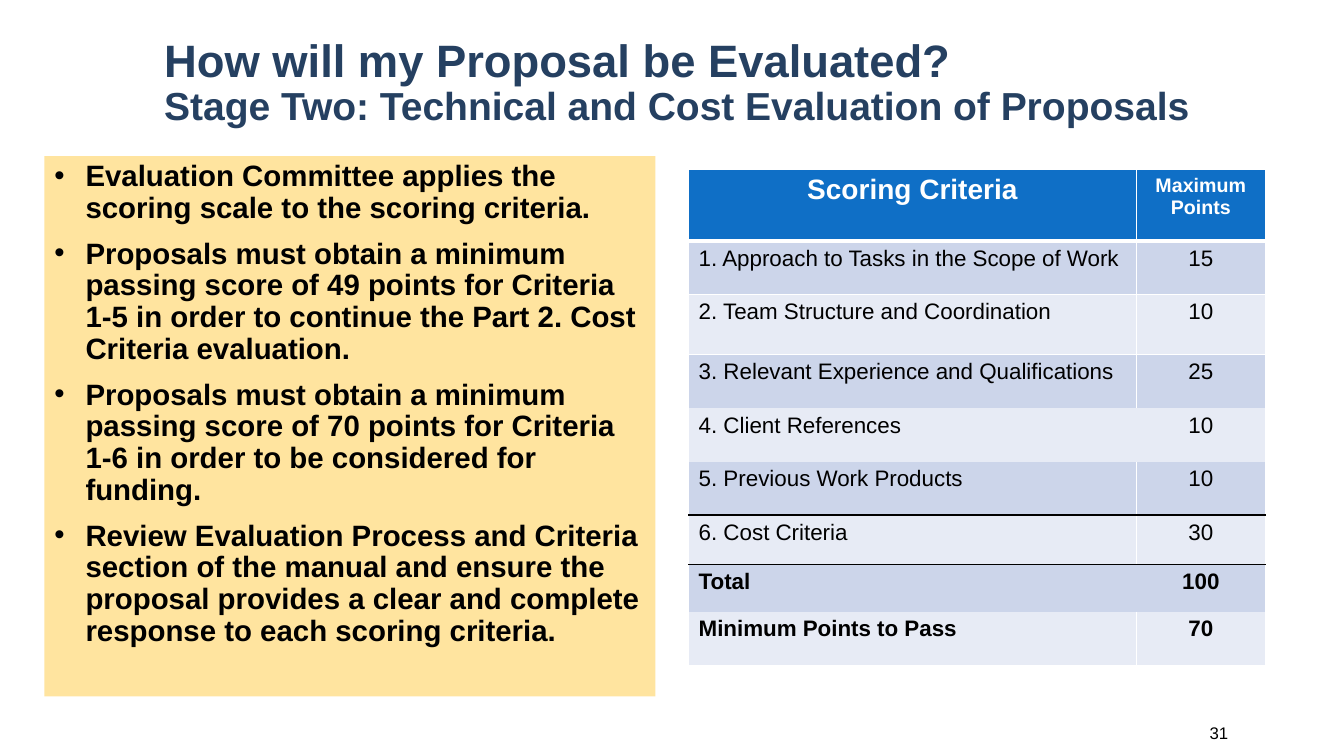
from dataclasses import dataclass

from lxml import etree
from pptx import Presentation
from pptx import util as u
from pptx.dml.color import RGBColor
from pptx.enum import shapes, text
from pptx.oxml import ns

PX = 9144  # EMU in one px, 100 px to the inch
FONT = "Arial"
NAVY = RGBColor(0x25, 0x40, 0x61)
CREAM = RGBColor(0xFF, 0xE4, 0x9F)
BLUE = RGBColor(0x0F, 0x6F, 0xC6)
BAND_DARK = RGBColor(0xCC, 0xD5, 0xEA)
BAND_LIGHT = RGBColor(0xE7, 0xEB, 0xF5)
WHITE = RGBColor(0xFF, 0xFF, 0xFF)
BLACK = RGBColor(0, 0, 0)


@dataclass(frozen=True)
class ScoreRow:
    """A table row; white and black list the sides (L, R, T, B) ruled in each colour."""
    label: str
    points: str
    height: int
    white: str = "LRTB"
    black: str = ""
    bold: bool = False


TITLE_LINES = [
    ("How will my Proposal be Evaluated?", 32.4),
    ("Stage Two: Technical and Cost Evaluation of Proposals", 27.9),
]
BULLETS = [
    "Evaluation Committee applies the scoring scale to the scoring criteria.",
    "Proposals must obtain a minimum passing score of 49 points for Criteria 1-5 "
    "in order to continue the Part 2. Cost Criteria evaluation.",
    "Proposals must obtain a minimum passing score of 70 points for Criteria 1-6 "
    "in order to be considered for funding.",
    "Review Evaluation Process and Criteria section of the manual and ensure the "
    "proposal provides a clear and complete response to each scoring criteria.",
]
COLUMN_WIDTHS = [444, 128]
HEADER_SIZES = [20, 14]
SCORE_ROWS = [
    ScoreRow("Scoring Criteria", "Maximum Points", 71, bold=True),
    ScoreRow("1. Approach to Tasks in the Scope of Work", "15", 53),
    ScoreRow("2. Team Structure and Coordination", "10", 60),
    ScoreRow("3. Relevant Experience and Qualifications", "25", 53, white="LRT"),
    ScoreRow("4. Client References", "10", 53, white=""),
    ScoreRow("5. Previous Work Products", "10", 53, white="LR", black="B"),
    ScoreRow("6. Cost Criteria", "30", 49, white="LR", black="TB"),
    ScoreRow("Total", "100", 47, white="", black="T", bold=True),
    ScoreRow("Minimum Points to Pass", "70", 53, white="LRB", bold=True),
]


def px(length: int) -> u.Emu:
    return u.Emu(length * PX)


def set_font(para, color: RGBColor, bold: bool, size: float | None = None) -> None:
    font = para.font
    font.name = FONT
    font.bold = bold
    font.color.rgb = color
    if size:
        font.size = u.Pt(size)


def add_text_box(page, left: int, top: int, width: int, height: int):
    """Add a wrapping, vertically centred text box and return its first paragraph."""
    box = page.shapes.add_textbox(px(left), px(top), px(width), px(height))
    box.text_frame.word_wrap = True
    box.text_frame.vertical_anchor = text.MSO_ANCHOR.MIDDLE
    return box.text_frame.paragraphs[0]


def add_title(page) -> None:
    para = add_text_box(page, 153, 26, 1089, 114)
    para.line_spacing = 0.9
    set_font(para, NAVY, True)
    for index, (line, size) in enumerate(TITLE_LINES):
        if index:
            para.add_line_break()
        span = para.add_run()
        span.text = line
        span.font.size = u.Pt(size)


def add_bullet_panel(page) -> None:
    panel = page.shapes.add_shape(
        shapes.MSO_SHAPE.RECTANGLE, px(44), px(155), px(606), px(536))
    panel.shadow.inherit = False
    panel.fill.solid()
    panel.fill.fore_color.rgb = CREAM
    panel.line.fill.background()
    frame = panel.text_frame
    frame.word_wrap = True
    frame.vertical_anchor = text.MSO_ANCHOR.TOP
    for index, bullet in enumerate(BULLETS):
        para = frame.add_paragraph() if index else frame.paragraphs[0]
        para.text = bullet
        para.alignment = text.PP_ALIGN.LEFT
        para.line_spacing = 0.9
        para.space_before = u.Pt(10 if index else 0)
        properties = para._p.get_or_add_pPr()
        properties.set("marL", str(px(31)))
        properties.set("indent", str(px(-31)))
        etree.SubElement(properties, ns.qn("a:buFont"), typeface=FONT)
        etree.SubElement(properties, ns.qn("a:buChar"), char="•")
        set_font(para, BLACK, True, 21)


def set_borders(cell, row: ScoreRow, is_header: bool) -> None:
    properties = cell._tc.get_or_add_tcPr()
    for side in "LRTB":
        width = u.Pt(3 if is_header and side == "B" else 1)
        line = etree.SubElement(properties, ns.qn(f"a:ln{side}"), w=str(width))
        if side in row.white + row.black:
            fill = etree.SubElement(line, ns.qn("a:solidFill"))
            color = BLACK if side in row.black else WHITE
            etree.SubElement(fill, ns.qn("a:srgbClr"), val=str(color))
        else:
            etree.SubElement(line, ns.qn("a:noFill"))


def add_score_table(page) -> None:
    heights = [row.height for row in SCORE_ROWS]
    table = page.shapes.add_table(
        len(SCORE_ROWS), len(COLUMN_WIDTHS), px(683), px(168),
        px(sum(COLUMN_WIDTHS)), px(sum(heights))).table
    for column, width in zip(table.columns, COLUMN_WIDTHS):
        column.width = px(width)
    for r, row in enumerate(SCORE_ROWS):
        table.rows[r].height = px(row.height)
        is_header = r == 0
        band = BLUE if is_header else BAND_DARK if r % 2 else BAND_LIGHT
        for c, content in enumerate((row.label, row.points)):
            cell = table.cell(r, c)
            set_borders(cell, row, is_header)
            cell.fill.solid()
            cell.fill.fore_color.rgb = band
            para = cell.text_frame.paragraphs[0]
            para.text = content
            centred = is_header or c == 1
            para.alignment = text.PP_ALIGN.CENTER if centred else text.PP_ALIGN.LEFT
            set_font(para, WHITE if is_header else BLACK, row.bold,
                     HEADER_SIZES[c] if is_header else 16)


def add_page_number(page) -> None:
    para = add_text_box(page, 1035, 707, 193, 40)
    para.text = "31"
    para.alignment = text.PP_ALIGN.RIGHT
    set_font(para, BLACK, False, 12)


def main() -> None:
    deck = Presentation()
    deck.slide_width, deck.slide_height = px(1333), px(750)
    page = deck.slides.add_slide(deck.slide_layouts[6])
    add_title(page)
    add_bullet_panel(page)
    add_score_table(page)
    add_page_number(page)
    deck.save("out.pptx")


if __name__ == "__main__":
    main()
